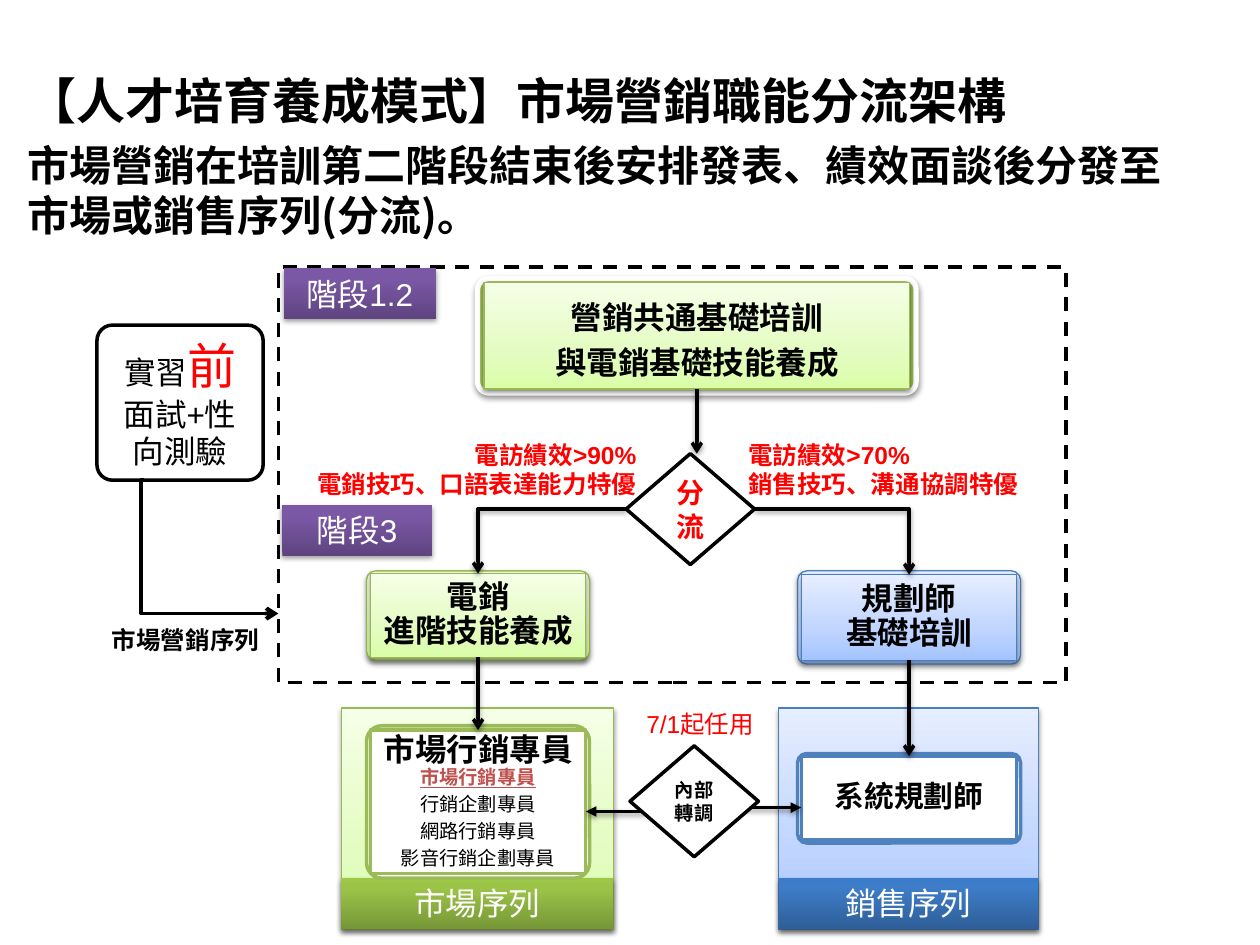
from lxml import etree
from pptx import Presentation
from pptx import util as u
from pptx.dml.color import RGBColor
from pptx.enum import dml, shapes, text
from pptx.oxml import ns

Pt = u.Pt
Shape = shapes.MSO_SHAPE
Anchor = text.MSO_ANCHOR
Align = text.PP_ALIGN

BLACK = RGBColor(0x00, 0x00, 0x00)
WHITE = RGBColor(0xFF, 0xFF, 0xFF)
RED = RGBColor(0xFF, 0x00, 0x00)
BRICK = RGBColor(0xC0, 0x50, 0x4D)
GREEN = RGBColor(0x9B, 0xBB, 0x59)
BLUE = RGBColor(0x4F, 0x81, 0xBD)
GREEN_EDGE = RGBColor(0x98, 0xB9, 0x55)
BLUE_EDGE = RGBColor(0x4B, 0x7E, 0xBC)


def stops(*pairs):
    return [(position, RGBColor.from_string(value)) for position, value in pairs]


PALE_GREEN = stops((0, "DAFDA7"), (35, "E4FCC2"), (100, "F5FFE7"))
PALE_BLUE = stops((0, "A4C4FF"), (35, "BFD4FF"), (100, "E6EEFF"))
DEEP_GREEN = stops((0, "779737"), (80, "9BC348"), (100, "9DC746"))
DEEP_BLUE = stops((0, "2F5F99"), (80, "3D7CC7"), (100, "3A7CCB"))
DEEP_PURPLE = stops((0, "5F4480"), (80, "7B58A6"), (100, "7C57A8"))

SANS = "Arial"
CJK = "Noto Sans CJK SC"
TOP, LEFT, BOTTOM, RIGHT = range(4)


def child(parent, tag, **attributes):
    return etree.SubElement(parent, ns.qn(tag), **attributes)


def set_effects(item, shadow):
    """Give the item a soft shadow below it, or an empty effect list."""
    properties = item._element.spPr
    for old in properties.findall(ns.qn("a:effectLst")):
        properties.remove(old)
    effects = child(properties, "a:effectLst")
    if shadow:
        outer = child(effects, "a:outerShdw", blurRad=str(Pt(3.1)), dist=str(Pt(1.6)),
                      dir="5400000", rotWithShape="0")
        child(child(outer, "a:srgbClr", val="000000"), "a:alpha", val="38000")


def set_gradient(shape, colours):
    """Fill from the bottom up with the listed colour stops."""
    shape.fill.gradient()
    gradient = shape._element.spPr.find(ns.qn("a:gradFill"))
    for old in list(gradient):
        gradient.remove(old)
    stop_list = child(gradient, "a:gsLst")
    for position, colour in colours:
        stop = child(stop_list, "a:gs", pos=str(position * 1000))
        child(stop, "a:srgbClr", val=str(colour))
    child(gradient, "a:lin", ang="16200000", scaled="0")


def add_box(page, kind, at, fill=WHITE, line=BLACK, width=2, shadow=False):
    box = page.shapes.add_shape(kind, *map(Pt, at))
    if kind == Shape.ROUNDED_RECTANGLE:
        box.adjustments[0] = 0.1
    if isinstance(fill, list):
        set_gradient(box, fill)
    else:
        box.fill.solid()
        box.fill.fore_color.rgb = fill
    if line is None:
        box.line.fill.background()
    else:
        box.line.color.rgb = line
        box.line.width = Pt(width)
    set_effects(box, shadow)
    return box


def style_span(span, size, colour, bold=False, font=SANS):
    span.font.size = Pt(size)
    span.font.bold = bold
    span.font.color.rgb = colour
    span.font.name = font
    child(span._r.get_or_add_rPr(), "a:ea", typeface=CJK)


def write(box, lines, size, colour=BLACK, bold=False, font=SANS, align=Align.CENTER,
          anchor=Anchor.MIDDLE, spacing=None, after=0, margin=None):
    """Write one paragraph per line; a vertical tab breaks within it."""
    frame = box.text_frame
    frame.word_wrap = True
    frame.vertical_anchor = anchor
    if margin is not None:
        frame.margin_left = frame.margin_right = Pt(margin)
        frame.margin_top = frame.margin_bottom = Pt(margin)
    frame.text = "\n".join(lines)
    for para in frame.paragraphs:
        para.alignment = align
        para.line_spacing = spacing
        para.space_before = Pt(0)
        para.space_after = Pt(after)
        for span in para.runs:
            style_span(span, size, colour, bold, font)
    return frame


def add_label(page, at, lines, size=14, **style):
    label = page.shapes.add_textbox(*map(Pt, at))
    write(label, lines, size, **{"align": Align.LEFT, "anchor": Anchor.TOP, **style})


def add_card(page, at, inset, lines, size=18, spacing=0.9, after=0,
             fill=WHITE, line=BLACK, width=2, shadow=False, frame=None):
    """Set a square-cornered text panel inside a rounded frame."""
    x, y, wide, high = at
    dx, dy = inset
    frame_fill, frame_line, frame_width = frame or (fill, line, width)
    add_box(page, Shape.ROUNDED_RECTANGLE, at, frame_fill, frame_line, frame_width, shadow)
    panel = add_box(page, Shape.RECTANGLE, (x + dx, y + dy, wide - 2 * dx, high - 2 * dy),
                    fill, line, width, shadow)
    write(panel, lines, size, bold=True, spacing=spacing, after=after, margin=0.72)
    return panel


def add_banner(page, at, caption, fill, font=SANS):
    banner = add_box(page, Shape.RECTANGLE, at, fill, None, shadow=True)
    write(banner, [caption], 18, WHITE, font=font, anchor=Anchor.TOP)


def add_series(page, x, width, caption, pale, deep, edge):
    add_box(page, Shape.RECTANGLE, (x, 404.6, width, 126.7), pale, edge, 0.75, True)
    add_banner(page, (x, 501.8, width, 29), caption, deep, CJK)


def add_diamond(page, at, caption, size, colour=BLACK):
    diamond = add_box(page, Shape.DIAMOND, at)
    write(diamond, [caption], size, colour, True, CJK)
    return diamond


def connect(page, begin, end, geometry="line", bend=None, head=None, tail="arrow",
            width=2, shadow=True):
    """Join two ends, each a point or a (shape, side) pair."""
    joined = [not isinstance(place[0], (int, float)) for place in (begin, end)]
    points = [(0, 0) if glued else place for glued, place in zip(joined, (begin, end))]
    kind = shapes.MSO_CONNECTOR.STRAIGHT if geometry == "line" else shapes.MSO_CONNECTOR.ELBOW
    link = page.shapes.add_connector(kind, *(Pt(value) for point in points for value in point))
    if joined[0]:
        link.begin_connect(*begin)
    if joined[1]:
        link.end_connect(*end)
    preset = link._element.spPr.find(ns.qn("a:prstGeom"))
    preset.set("prst", geometry)
    if bend is not None:
        child(preset.find(ns.qn("a:avLst")), "a:gd", name="adj1", fmla=f"val {bend}")
    link.line.color.rgb = BLACK
    link.line.width = Pt(width)
    outline = link.line._get_or_add_ln()
    for tag, tip in (("a:headEnd", head), ("a:tailEnd", tail)):
        if tip:
            child(outline, tag, type=tip)
    set_effects(link, shadow)


def add_headings(page):
    title = page.shapes.title
    title.left, title.top, title.width, title.height = map(Pt, (8.6, 37.4, 711.4, 39.6))
    write(title, ["【人才培育養成模式】市場營銷職能分流架構"], 28, bold=True, align=Align.LEFT)
    add_label(page, (8.6, 77, 711.4, 62.6),
              ["市場營銷在培訓第二階段結束後安排發表、績效面談後分發至\v市場或銷售序列(分流)。"],
              24, bold=True, font=CJK, anchor=Anchor.MIDDLE)


def add_entry(page):
    entry = add_box(page, Shape.ROUNDED_RECTANGLE, (55.4, 185.8, 95, 88.6))
    para = write(entry, ["實習"], 18, anchor=Anchor.TOP).paragraphs[0]
    for words, size, colour in (("前", 28, RED), ("面試+性向測驗", 18, BLACK)):
        span = para.add_run()
        span.text = words
        style_span(span, size, colour)


def main():
    deck = Presentation()
    deck.slide_width, deck.slide_height = Pt(720), Pt(540)
    page = deck.slides.add_slide(deck.slide_layouts[5])
    add_headings(page)

    stage = add_box(page, Shape.RECTANGLE, (159.1, 152.6, 450, 237.6))
    stage.line.dash_style = dml.MSO_LINE.DASH
    green = dict(fill=PALE_GREEN, line=GREEN_EDGE, width=0.75, shadow=True)
    blue = dict(fill=PALE_BLUE, line=BLUE_EDGE, width=0.75, shadow=True)
    basics = add_card(page, (272.9, 159.1, 250.6, 65.5), (3.6, 2.2),
                      ["營銷共通基礎培訓\v與電銷基礎技能養成"], spacing=1.2,
                      frame=(GREEN, WHITE, 3), **green)
    connect(page, (basics, BOTTOM), (398.2, 259.2))
    add_banner(page, (162, 153.4, 87.1, 28.8), "階段1.2", DEEP_PURPLE)
    add_entry(page)

    add_series(page, 195.1, 155.5, "市場序列", PALE_GREEN, DEEP_GREEN, GREEN_EDGE)
    marketing = add_card(page, (209.5, 414.7, 127.4, 87.1), (2.2, 2.5),
                         ["市場行銷專員\v市場行銷專員", "行銷企劃專員", "網路行銷專員", "影音行銷企劃專員"],
                         11, after=3.5, line=GREEN)
    first, *others = marketing.text_frame.paragraphs
    first.runs[0].font.size = Pt(18)
    first.runs[1].font.color.rgb = BRICK
    first.runs[1].font.underline = True
    for para in others:
        para.runs[0].font.bold = False
    add_series(page, 445, 148.3, "銷售序列", PALE_BLUE, DEEP_BLUE, BLUE_EDGE)
    planner = add_card(page, (455.8, 430.6, 127.4, 51.1), (2.2, 1.6), ["系統規劃師"], 17, line=BLUE)

    connect(page, (457.9, 461.5), (334.8, 463.7), "bentConnector3", 50000, "triangle", "triangle")
    add_diamond(page, (360, 426.2, 73.4, 63.4), "內部轉調", 11)
    add_label(page, (56.9, 353.5, 105.1, 24.5), ["市場營銷序列"], bold=True)

    split = add_diamond(page, (357.8, 259.2, 73.4, 63.4), "分流", 16, RED)
    planning = add_card(page, (455.8, 326.2, 127.4, 53.3), (2.2, 2.2), ["規劃師\v基礎培訓"], **blue)
    calling = add_card(page, (209.5, 326.2, 127.4, 51.1), (2.2, 1.6), ["電銷\v進階技能養成"], **green)
    connect(page, (split, RIGHT), (planning, TOP), "bentConnector2")
    connect(page, (split, LEFT), (calling, TOP), "bentConnector2")
    connect(page, (calling, BOTTOM), (marketing, TOP))
    connect(page, (planning, BOTTOM), (planner, TOP))

    add_label(page, (420.5, 247.7, 182.9, 41), ["電訪績效>70%", "銷售技巧、溝通協調特優"],
              colour=RED, bold=True)
    add_label(page, (153.4, 247.7, 217.4, 41), ["電訪績效>90%\v電銷技巧、口語表達能力特優"],
              colour=RED, bold=True, align=Align.RIGHT)
    add_banner(page, (161.3, 288.7, 85.7, 28.8), "階段3", DEEP_PURPLE)
    add_label(page, (362.2, 401.8, 82.8, 24.5), ["7/1起任用"], colour=RED)
    connect(page, (82.1, 274.3), (159.1, 350.6), "bentConnector3", -1800, width=2.25, shadow=False)
    deck.save("out.pptx")


if __name__ == "__main__":
    main()
